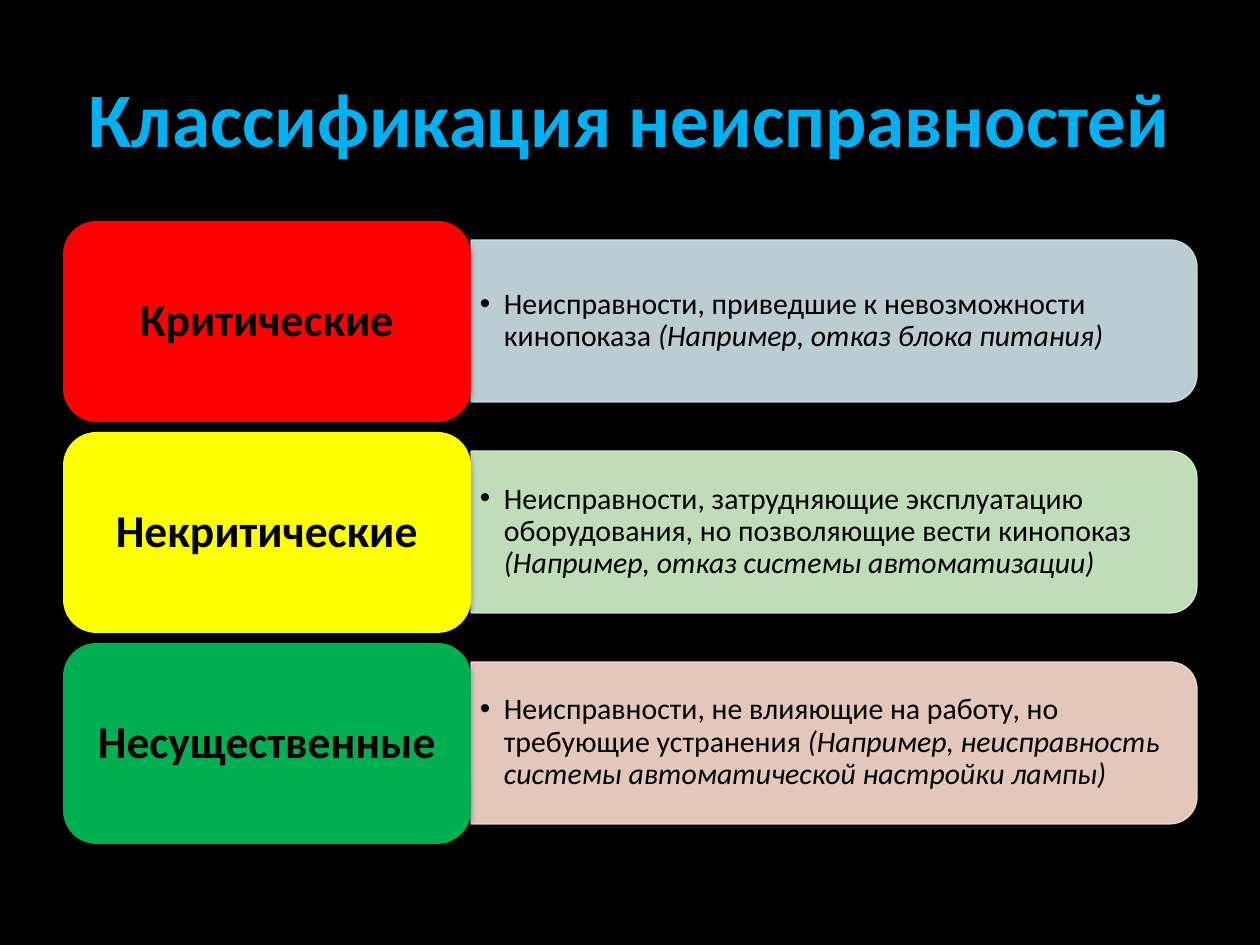
"""Build a slide that sorts faults into three classes."""
from dataclasses import dataclass

from lxml import etree
from pptx import Presentation
from pptx.dml.color import RGBColor
from pptx.enum.shapes import MSO_SHAPE
from pptx.enum.text import MSO_ANCHOR, PP_ALIGN
from pptx.oxml.ns import qn
from pptx.util import Pt

TILE = MSO_SHAPE.ROUNDED_RECTANGLE
BAR = MSO_SHAPE.ROUND_2_SAME_RECTANGLE
MIDDLE = MSO_ANCHOR.MIDDLE
LEFT, CENTER = PP_ALIGN.LEFT, PP_ALIGN.CENTER

SCALE = 914400 / 126
FONT = "Calibri"
TOP, PITCH = 221, 211
COLORS = {
    "black": "000000", "title": "00B0F0",
    "red": "FF0000", "yellow": "FFFF00", "green": "00B050",
    "blue tint": "D0E3EA", "green tint": "D6F4CE", "red tint": "FCDDCF",
}


@dataclass
class Fault:
    name: str
    color: str
    tint: str
    text: str
    case: str


FAULTS = [
    Fault("Критические", "red", "blue tint",
          "Неисправности, приведшие к невозможности кинопоказа ",
          "(Например, отказ блока питания)"),
    Fault("Некритические", "yellow", "green tint",
          "Неисправности, затрудняющие эксплуатацию оборудования, "
          "но позволяющие вести кинопоказ ",
          "(Например, отказ системы автоматизации)"),
    Fault("Несущественные", "green", "red tint",
          "Неисправности, не влияющие на работу, но требующие устранения ",
          "(Например, неисправность системы автоматической настройки лампы)"),
]


def px(size: int) -> int:
    return round(size * SCALE)


def rgb(color: str) -> RGBColor:
    return RGBColor.from_string(COLORS[color])


def child(node, tag: str, **attrs):
    return etree.SubElement(node, qn(tag), attrs)


def write(frame, text: str, *, size: int, color: str = "black", bold: bool = False,
          tail: str = "", align=CENTER, lines: float = 0.9,
          inset: tuple = (14, 6), bullet: bool = False) -> None:
    frame.word_wrap = True
    frame.vertical_anchor = MIDDLE
    frame.margin_left = frame.margin_right = px(inset[0])
    frame.margin_top = frame.margin_bottom = px(inset[1])
    para = frame.paragraphs[0]
    if bullet:
        props = para._p.get_or_add_pPr()
        props.set("marL", str(px(24)))
        props.set("indent", str(px(-24)))
        child(props, "a:buFont", typeface="Arial")
        child(props, "a:buChar", char="•")
    para.alignment = align
    para.line_spacing = lines
    for part, slant in ((text, False), (tail, True)):
        if part:
            run = para.add_run()
            run.text = part
            font = run.font
            font.name, font.size = FONT, Pt(size)
            font.bold, font.italic = bold, slant
            font.color.rgb = rgb(color)


def shade(shape) -> None:
    shape.shadow.inherit = False
    effects = shape._element.spPr.find(qn("a:effectLst"))
    shadow = child(effects, "a:outerShdw", blurRad="40000", dist="23000",
                   dir="5400000", rotWithShape="0")
    ink = child(shadow, "a:srgbClr", val=COLORS["black"])
    child(ink, "a:alpha", val="35000")


def draw_bar(slide, fault: Fault, top: int) -> None:
    left, wide, high = 471, 726, 162
    shift = (wide - high) // 2
    bar = slide.shapes.add_shape(BAR, px(left + shift), px(top - shift),
                                 px(high), px(wide))
    bar.rotation = 90
    bar.fill.solid()
    bar.fill.fore_color.rgb = rgb(fault.tint)
    bar.line.color.rgb = rgb(fault.tint)
    bar.line.width = Pt(0.75)
    for ink in bar._element.spPr.iter(qn("a:srgbClr")):
        child(ink, "a:alpha", val="90000")
    shade(bar)
    box = slide.shapes.add_textbox(px(left), px(top + 8), px(718), px(145))
    write(box.text_frame, fault.text, tail=fault.case, size=17,
          align=LEFT, inset=(9, 5), bullet=True)


def draw_tile(slide, fault: Fault, top: int) -> None:
    tile = slide.shapes.add_shape(TILE, px(63), px(top), px(408), px(201))
    tile.fill.solid()
    tile.fill.fore_color.rgb = rgb(fault.color)
    tile.line.fill.background()
    shade(tile)
    write(tile.text_frame, fault.name, size=26, bold=True)


def main() -> None:
    deck = Presentation()
    deck.slide_width, deck.slide_height = px(1260), px(945)
    slide = deck.slides.add_slide(deck.slide_layouts[5])
    back = slide.background.fill
    back.solid()
    back.fore_color.rgb = rgb("black")
    title = slide.shapes.title
    title.left, title.top = px(63), px(38)
    title.width, title.height = px(1134), px(158)
    write(title.text_frame, "Классификация неисправностей", size=44,
          color="title", bold=True, lines=1.0)
    for row, fault in enumerate(FAULTS):
        top = TOP + row * PITCH
        draw_bar(slide, fault, top + 19)
        draw_tile(slide, fault, top)
    deck.save("out.pptx")


if __name__ == "__main__":
    main()
